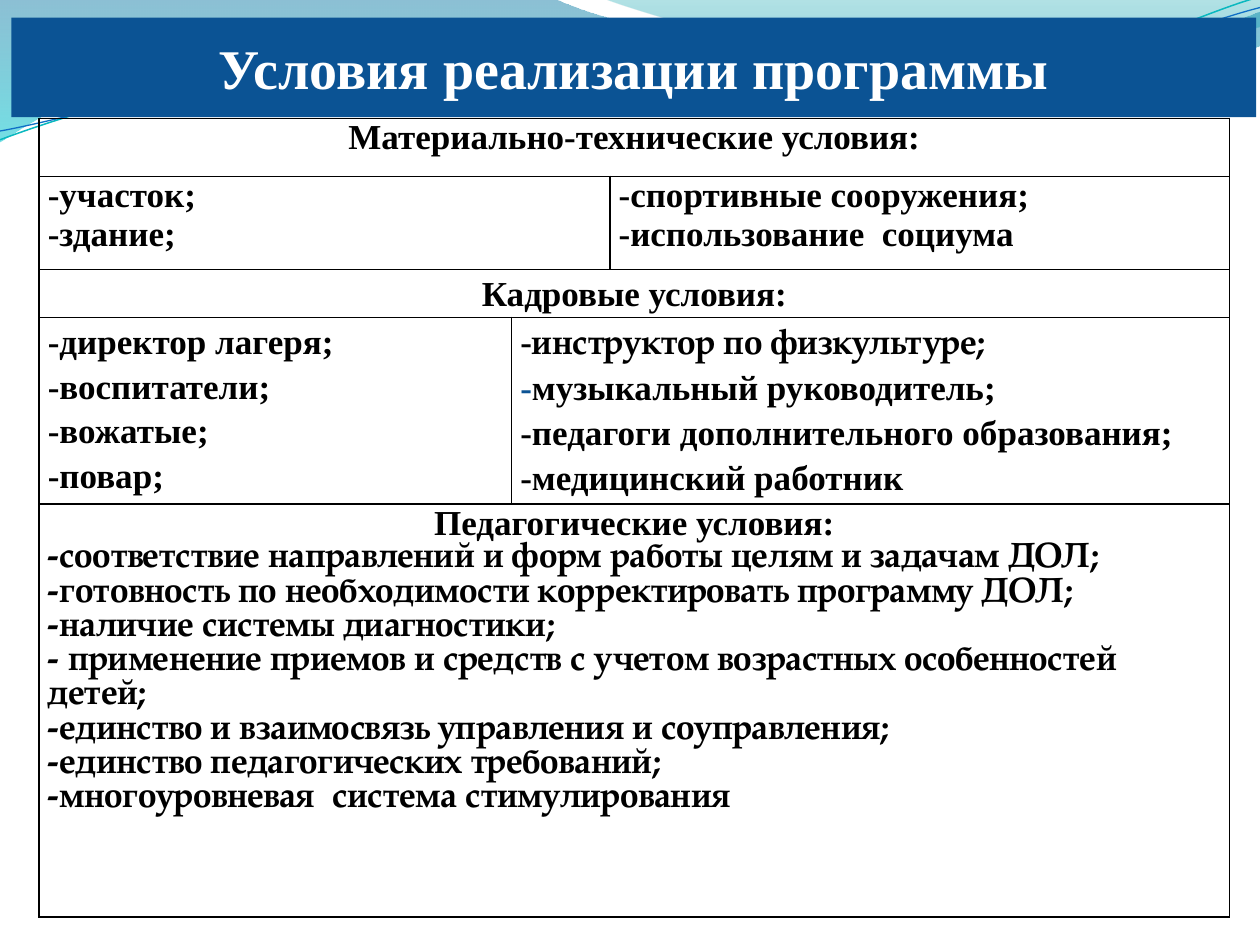
from lxml import etree
from pptx import Presentation
from pptx.dml.color import RGBColor
from pptx.enum.text import MSO_ANCHOR, PP_ALIGN
from pptx.oxml import parse_xml
from pptx.oxml.ns import nsdecls, qn
from pptx.util import Inches, Pt

CENTER, LEFT = PP_ALIGN.CENTER, PP_ALIGN.LEFT
MIDDLE, TOP = MSO_ANCHOR.MIDDLE, MSO_ANCHOR.TOP

BLUE = RGBColor(0x0B, 0x53, 0x94)
WHITE = RGBColor(0xFF, 0xFF, 0xFF)
BLACK = RGBColor(0, 0, 0)
TEAL_LINE = RGBColor(0x0A, 0xB8, 0xBF)
BLUE_LINE = RGBColor(0x0F, 0x6F, 0xC6)
SERIF, PAGELLA = "Times New Roman", "TeX Gyre Pagella"

# Wave outlines: a start point, then cubic curves (6 numbers) or lines (2)
LARGE_WAVE = [(0, 0), (4.4, -0.01), (4.76, 0.17, 6.64, 0.63, 7.58, 0.63),
              (8.53, 0.63, 9.58, 0.26, 10, 0.09), (10.01, 0.36),
              (9.83, 0.44, 8.7, 0.76, 7.46, 0.75),
              (6.22, 0.75, 3.82, 0.28, 2.57, 0.34),
              (1.29, 0.36, 0.46, 0.83, -0.01, 1.13), (0, 0)]
SMALL_WAVE = [(4.79, -0.01), (5.09, 0.11, 6.82, 0.62, 7.69, 0.65),
              (8.56, 0.69, 9.61, 0.32, 10, 0.21), (10, 0), (4.79, -0.01)]
TEAL_CURVE = [(0, 1.11), (0.48, 0.93, 1.58, 0.57, 2.77, 0.52),
              (3.95, 0.47, 5.93, 0.89, 7.13, 0.8),
              (8.33, 0.71, 9.38, 0.15, 9.98, -0.02)]
BLUE_CURVE = [(0, 1.04), (0.47, 0.96, 1.64, 0.61, 2.83, 0.56),
              (4.03, 0.51, 5.97, 0.84, 7.17, 0.75),
              (8.36, 0.67, 9.41, 0.21, 10, 0.06)]

COLUMNS = [3.75, 0.78, 4.92]
ROWS = [0.46, 0.74, 0.38, 1.48, 3.28]


def plain(*lines, font=SERIF):
    """Paragraphs of one black run each."""
    return [[(line, font, BLACK)] for line in lines]


# Cells: row, first column, last column, line spacing, alignment, paragraphs.
# A paragraph is a list of (text, font, colour) runs.
CELLS = [
    (0, 0, 2, None, CENTER, plain("Материально-технические условия:")),
    (1, 0, 1, None, LEFT, plain("-участок;", "-здание;")),
    (1, 2, 2, None, LEFT, plain("-спортивные сооружения;", "-использование  социума")),
    (2, 0, 2, 1.15, CENTER, plain("Кадровые условия:")),
    (3, 0, 0, 1.15, LEFT, plain("-директор лагеря;", "-воспитатели;", "-вожатые;", "-повар;")),
    (3, 1, 2, 1.15, LEFT, [
        [("-", SERIF, BLACK), ("инструктор по физкультуре;", PAGELLA, BLACK)],
        [("-", SERIF, BLUE), ("музыкальный руководитель;", SERIF, BLACK)],
        *plain("-педагоги дополнительного образования;", "-медицинский работник")]),
    (4, 0, 2, None, LEFT, plain("Педагогические условия:") + plain(
        "-соответствие направлений и форм работы целям и задачам ДОЛ;",
        "-готовность по необходимости корректировать программу ДОЛ;",
        "-наличие системы диагностики;",
        "- применение приемов и средств с учетом возрастных особенностей детей;",
        "-единство и взаимосвязь управления и соуправления;",
        "-единство педагогических требований;",
        "-многоуровневая  система стимулирования", font=PAGELLA)),
]


def add_outline(slide, segments, close):
    """Freeform whose six-number segments become cubic curves."""
    points = [(Inches(x), Inches(y)) for seg in segments
              for x, y in zip(seg[::2], seg[1::2])]
    builder = slide.shapes.build_freeform(*points[0])
    builder.add_line_segments(points[1:], close=close)
    sp = builder.convert_to_shape()
    sp.shadow.inherit = False
    lines = iter(list(sp.element.iter(qn("a:lnTo"))))
    for seg in segments[1:]:
        ln = next(lines)
        if len(seg) == 6:
            ln.tag = qn("a:cubicBezTo")
            for _ in range(2):
                extra = next(lines)
                ln.append(extra[0])
                extra.getparent().remove(extra)
    return sp


def add_wave(slide, segments, stops):
    """Filled wave with a translucent vertical gradient."""
    sp = add_outline(slide, segments, True)
    sp.line.fill.background()
    gs = "".join(f'<a:gs pos="{pos}000"><a:srgbClr val="{color}">'
                 f'<a:alpha val="{alpha}000"/></a:srgbClr></a:gs>'
                 for pos, color, alpha in stops)
    sp.element.spPr.find(qn("a:custGeom")).addnext(parse_xml(
        f'<a:gradFill {nsdecls("a")}><a:gsLst>{gs}</a:gsLst>'
        '<a:lin ang="5400000" scaled="0"/></a:gradFill>'))


def add_curve(slide, segments, color, width):
    sp = add_outline(slide, segments, False)
    sp.fill.background()
    sp.line.color.rgb = color
    sp.line.width = Pt(width)


def add_decoration(slide):
    add_wave(slide, LARGE_WAVE, [(0, "0074A1", 45), (100, "00C6CF", 55)])
    add_wave(slide, SMALL_WAVE, [(0, "00A1A9", 30), (80, "008BBF", 45)])
    add_curve(slide, TEAL_CURVE, TEAL_LINE, 0.85)
    add_curve(slide, BLUE_CURVE, BLUE_LINE, 0.75)


def format_run(r, size, font, color):
    r.font.size, r.font.name, r.font.bold = Pt(size), font, True
    r.font.color.rgb = color


def add_title(slide, left, top, width, height):
    # Move the title placeholder above the decoration
    title = slide.shapes.title
    slide.shapes.element.append(title.element)
    title.left, title.top = Inches(left), Inches(top)
    title.width, title.height = Inches(width), Inches(height)
    title.fill.solid()
    title.fill.fore_color.rgb = BLUE
    tf = title.text_frame
    tf.text = "Условия реализации программы"
    tf.vertical_anchor = MIDDLE
    p = tf.paragraphs[0]
    p.alignment = CENTER
    format_run(p.runs[0], 32, SERIF, WHITE)


def set_borders(cell):
    tcPr = cell._tc.get_or_add_tcPr()
    for i, side in enumerate(("lnL", "lnR", "lnT", "lnB")):
        ln = etree.Element(qn(f"a:{side}"), w=str(Pt(1)))
        fill = etree.SubElement(ln, qn("a:solidFill"))
        etree.SubElement(fill, qn("a:srgbClr"), val=str(BLACK))
        tcPr.insert(i, ln)


def fill_cell(cell, spacing, alignment, paragraphs):
    cell.margin_left = cell.margin_right = Inches(0.07)
    cell.margin_top = cell.margin_bottom = 0
    cell.vertical_anchor = TOP
    tf = cell.text_frame
    for i, runs in enumerate(paragraphs):
        p = tf.add_paragraph() if i else tf.paragraphs[0]
        p.alignment = alignment
        if spacing:
            p.line_spacing = spacing
        for text, font, color in runs:
            r = p.add_run()
            r.text = text
            format_run(r, 20, font, color)


def add_conditions_table(slide, left, top, width, height):
    table = slide.shapes.add_table(len(ROWS), len(COLUMNS), Inches(left), Inches(top),
                                   Inches(width), Inches(height)).table
    table.first_row = table.horz_banding = False
    for column, w in zip(table.columns, COLUMNS):
        column.width = Inches(w)
    for row, h in zip(table.rows, ROWS):
        row.height = Inches(h)
    for cell in table.iter_cells():
        cell.fill.background()
        set_borders(cell)
    for row, first, last, spacing, alignment, paragraphs in CELLS:
        cell = table.cell(row, first)
        if last > first:
            cell.merge(table.cell(row, last))
        fill_cell(cell, spacing, alignment, paragraphs)
    # The last row opens with a centred heading
    table.cell(4, 0).text_frame.paragraphs[0].alignment = CENTER


def main():
    prs = Presentation()
    prs.slide_width, prs.slide_height = Inches(10), Inches(7.5)
    slide = prs.slides.add_slide(prs.slide_layouts[5])
    add_decoration(slide)
    add_title(slide, 0.09, 0.14, 9.88, 0.79)
    add_conditions_table(slide, 0.31, 0.94, sum(COLUMNS), sum(ROWS))
    prs.save("out.pptx")


if __name__ == "__main__":
    main()
